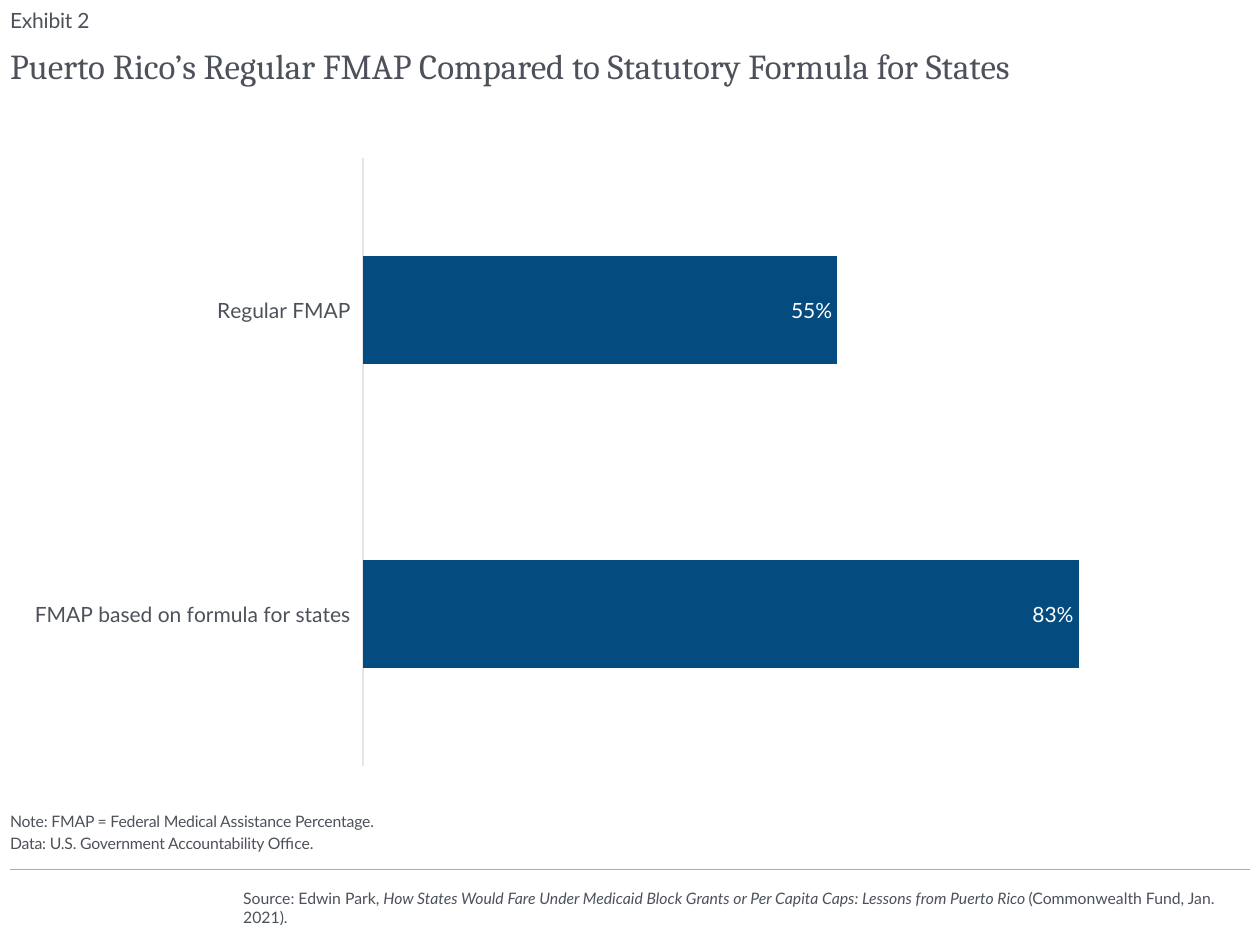
"""Build the exhibit slide comparing Puerto Rico's FMAP with the state formula."""
from lxml.etree import SubElement
from pptx import Presentation
from pptx.chart.data import CategoryChartData
from pptx.dml.color import RGBColor
from pptx.enum.chart import XL_CHART_TYPE, XL_LABEL_POSITION, XL_TICK_LABEL_POSITION, XL_TICK_MARK
from pptx.enum.shapes import MSO_CONNECTOR
from pptx.enum.text import MSO_ANCHOR, MSO_AUTO_SIZE, PP_ALIGN
from pptx.oxml.ns import qn
from pptx.util import Inches, Pt

TEXT, BLUE, WHITE = "4C515A", "044C7F", "FFFFFF"
LEFT, WIDTH = 0.08, 9.84


def style(font, size, color=TEXT, name="Lato"):
    font.size = Pt(size)
    font.name = name
    font.color.rgb = RGBColor.from_string(color)


def set_frame(sp, left, top, width, height, anchor):
    sp.left, sp.top, sp.width, sp.height = map(Inches, (left, top, width, height))
    tf = sp.text_frame
    tf.word_wrap = True
    tf.auto_size = MSO_AUTO_SIZE.NONE
    tf.vertical_anchor = anchor
    tf.margin_left = tf.margin_top = tf.margin_right = tf.margin_bottom = 0
    return tf


prs = Presentation()
prs.slide_width, prs.slide_height = Inches(10), Inches(7.5)
s = prs.slides.add_slide(prs.slide_layouts[5])

tf = set_frame(s.shapes.title, LEFT, 0.32, WIDTH, 0.83, MSO_ANCHOR.TOP)
tf.text = "Puerto Rico’s Regular FMAP Compared to Statutory Formula for States"
p = tf.paragraphs[0]
p.alignment = PP_ALIGN.LEFT
p.line_spacing = 1.1
style(p.font, 20, name="Cambria")

data = CategoryChartData(number_format="0%")
data.categories = ["FMAP based on formula for states", "Regular FMAP"]
data.add_series("Series 1", (0.83, 0.55))
chart = s.shapes.add_chart(XL_CHART_TYPE.BAR_CLUSTERED, Inches(LEFT), Inches(1.15),
                           Inches(WIDTH), Inches(5.03), data).chart
chart.has_legend = False
chart.has_title = False
style(chart.font, 10)

axis = chart.category_axis
axis.major_tick_mark = axis.minor_tick_mark = XL_TICK_MARK.NONE
axis.tick_label_position = XL_TICK_LABEL_POSITION.LOW
axis.format.line.color.rgb = RGBColor.from_string("E3E5E7")
axis.format.line.width = Pt(0.75)
style(axis.tick_labels.font, 12)
axis = chart.value_axis
axis.minimum_scale, axis.maximum_scale = 0, 1
axis.has_major_gridlines = False
axis.visible = False

plot = chart.plots[0]
plot.gap_width = 182
plot.vary_by_categories = False
fill = plot.series[0].format.fill
fill.solid()
fill.fore_color.rgb = RGBColor.from_string(BLUE)
labels = plot.series[0].data_labels
labels.show_value = True
labels.number_format = "0%"
labels.number_format_is_linked = False
labels.position = XL_LABEL_POSITION.INSIDE_END
style(labels.font, 12, WHITE)

notes = [
    (0.01, 0.25, 12, ["Exhibit 2"]),
    (6.23, 0.54, 9, ["Note: FMAP = Federal Medical Assistance Percentage.",
                     "Data: U.S. Government Accountability Office."]),
]
for top, height, size, lines in notes:
    sp = s.shapes.add_textbox(0, 0, 0, 0)
    tf = set_frame(sp, LEFT, top, WIDTH, height, MSO_ANCHOR.BOTTOM)
    tf.text = "\n".join(lines)
    for i, p in enumerate(tf.paragraphs):
        style(p.font, size)
        p.runs[0]._r.get_or_add_rPr().set("spc", "-10")
        if i:
            p.space_before = Pt(1.8)

rule = s.shapes.add_connector(MSO_CONNECTOR.STRAIGHT, Inches(LEFT), Inches(6.9),
                              Inches(LEFT + WIDTH), Inches(6.9))
rule.line.color.rgb = RGBColor.from_string("ABABAB")
rule.line.width = Pt(0.75)
SubElement(rule._element.spPr, qn("a:effectLst"))

sp = s.shapes.add_textbox(0, 0, 0, 0)
tf = set_frame(sp, 1.93, 6.98, 7.99, 0.45, MSO_ANCHOR.MIDDLE)
p = tf.paragraphs[0]
style(p.font, 9)
for text, italic in [
    ("Source: Edwin Park, ", False),
    ("How States Would Fare Under Medicaid Block Grants or Per Capita Caps: "
     "Lessons from Puerto Rico ", True),
    ("(Commonwealth Fund, Jan. 2021).", False),
]:
    r = p.add_run()
    r.text = text
    r.font.italic = italic

prs.save("out.pptx")
